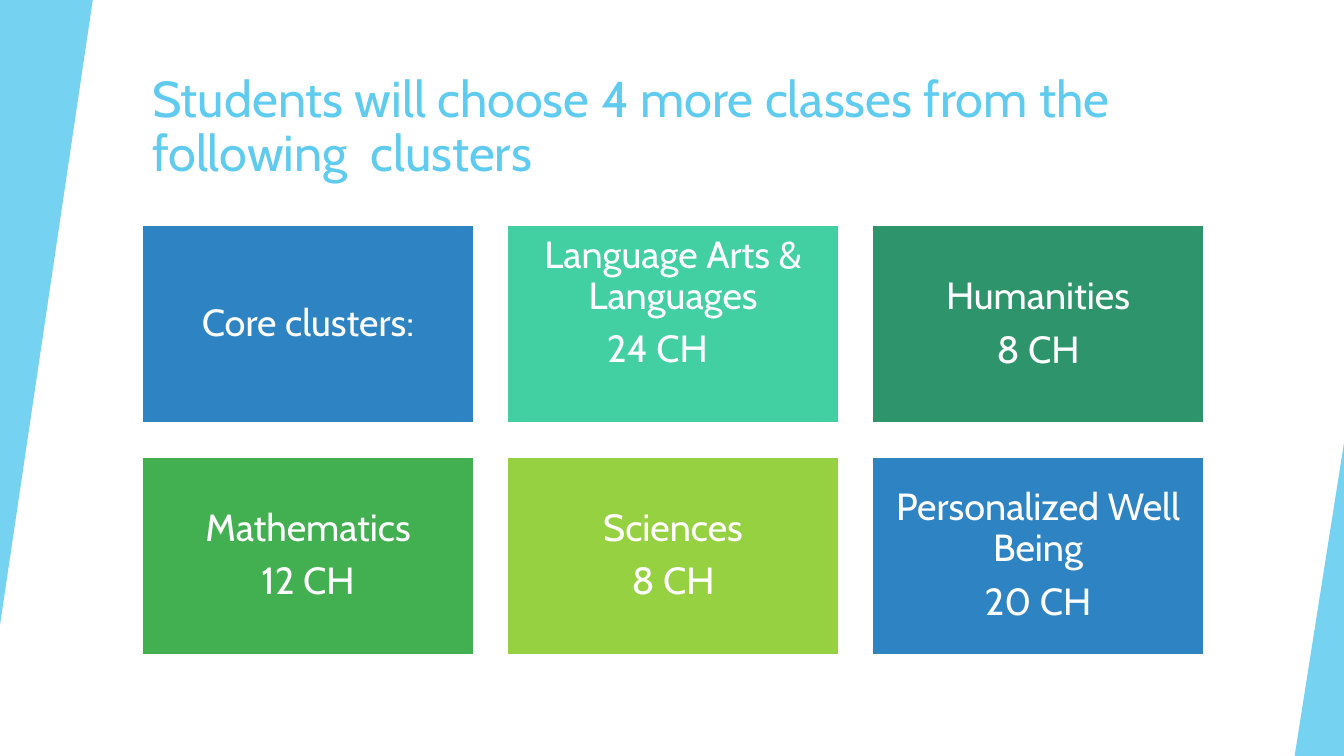
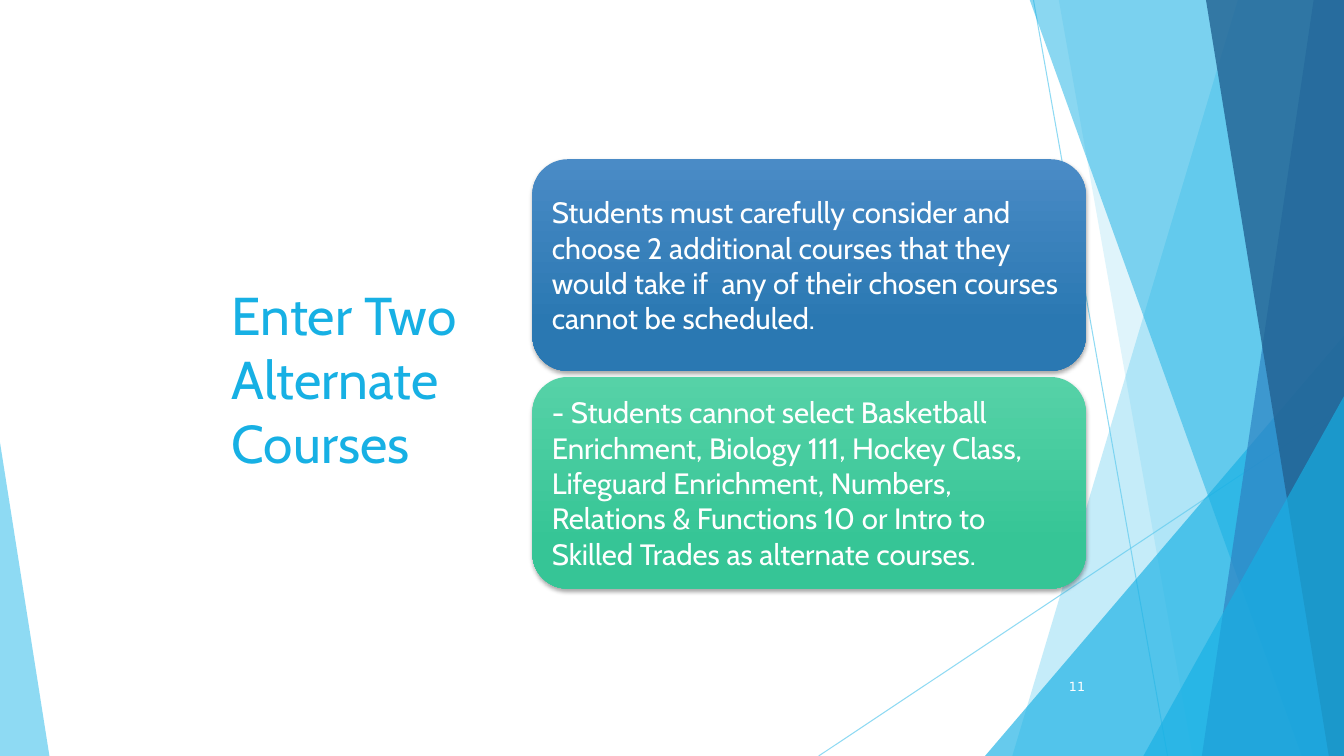
from pptx import Presentation
from pptx.dml.color import RGBColor
from pptx.enum.shapes import MSO_CONNECTOR, MSO_SHAPE as Preset
from pptx.enum.text import MSO_ANCHOR as Anchor, PP_ALIGN as Align
from pptx.oxml.ns import qn
from pptx.oxml.xmlchemy import OxmlElement
from pptx.util import Emu, Pt

PX = 9144  # one hundredth of an inch
WIDTH, HEIGHT = 1333, 750
FONT = "Cabin"
WHITE, SKY, AZURE, BLUE, NAVY = "FFFFFF", "5FCBEF", "17B0E4", "2E83C3", "226292"

# Tiles: fill, lines of text, space kept below, last line's right margin
TILES = [
    (BLUE, ["Core clusters:"], 11, 0),
    ("42D0A2", ["Language Arts & Languages", "24 CH"], 52, 31),
    ("2E946B", ["Humanities", "8 CH"], 11, 0),
    ("42B051", ["Mathematics", "12 CH"], 11, 0),
    ("96D141", ["Sciences", "8 CH"], 11, 0),
    (BLUE, ["Personalized Well Being", "20 CH"], 11, 0),
]
# Cards: top colour, bottom colour, text
CARDS = [
    ("4A8BC6", "2A78B2",
     "Students must carefully consider and choose 2 additional courses that "
     "they would take if  any of their chosen courses cannot be scheduled."),
    ("56D2A7", "36C596",
     "- Students cannot select Basketball Enrichment, Biology 111, Hockey "
     "Class, Lifeguard Enrichment, Numbers, Relations & Functions 10 or Intro "
     "to Skilled Trades as alternate courses."),
]


def px(*lengths):
    return [Emu(length * PX) for length in lengths]


def rgb(color):
    return RGBColor.from_string(color)


def set_alpha(shape, percent):
    for color in shape.element.iter(qn("a:srgbClr")):
        alpha = OxmlElement("a:alpha")
        alpha.set("val", str(percent * 1000))
        color.append(alpha)


def paint(shape, color, alpha=100):
    """Flat fill, no outline, no shadow."""
    shape.shadow.inherit = False
    shape.line.fill.background()
    shape.fill.solid()
    shape.fill.fore_color.rgb = rgb(color)
    if alpha < 100:
        set_alpha(shape, alpha)


def add_preset(page, preset, box, color, alpha=100):
    shape = page.shapes.add_shape(preset, *px(*box))
    paint(shape, color, alpha)
    return shape


def add_triangle(page, box, color, alpha, apex, rotation=0):
    shape = add_preset(page, Preset.ISOSCELES_TRIANGLE, box, color, alpha)
    shape.adjustments[0] = apex
    shape.rotation = rotation


def add_band(page, top_x, bottom_x, color, alpha):
    """Full-height band from a slanted left edge to the right side."""
    outline = page.shapes.build_freeform(top_x, -1, scale=PX)
    outline.add_line_segments([(WIDTH, -1), (WIDTH, HEIGHT), (bottom_x, HEIGHT)])
    paint(outline.convert_to_shape(), color, alpha)


def add_hairline(page, ends):
    line = page.shapes.add_connector(MSO_CONNECTOR.STRAIGHT, *px(*ends))
    line.line.color.rgb = rgb(SKY)
    line.line.width = Pt(0.75)
    set_alpha(line, 70)
    line.element.spPr.append(OxmlElement("a:effectLst"))


def draw_facets(page):
    add_hairline(page, (1025, 0, 1158, HEIGHT))
    add_hairline(page, (WIDTH, 403, 812, HEIGHT))
    add_band(page, 1228, 1004, SKY, 36)
    add_band(page, 1050, 1183, SKY, 20)
    add_triangle(page, (977, 333, 356, 417), AZURE, 66, apex=1)
    add_band(page, 1021, 1291, AZURE, 50)
    add_band(page, 1303, 1192, BLUE, 70)
    add_band(page, 1196, 1318, NAVY, 80)
    add_triangle(page, (1134, 393, 199, 357), AZURE, 66, apex=1)
    add_triangle(page, (0, 439, 49, 311), SKY, 70, apex=0)


def build_master(deck, page):
    """Draw the facets on an empty page, then move them behind the master."""
    title = page.shapes.title
    draw_facets(page)
    tree = deck.slide_master.shapes.element
    facets = [s for s in page.shapes if s.shape_id != title.shape_id]
    for number, shape in enumerate(facets):
        next(shape.element.iter(qn("p:cNvPr"))).set("id", str(100 + number))
        tree.insert(2 + number, shape.element)


def write(shape, lines, size, color=WHITE, align=Align.LEFT, spacing=1.0,
          after=0, inset=None, font=FONT):
    frame = shape.text_frame
    frame.word_wrap = True
    frame.vertical_anchor = Anchor.MIDDLE
    if inset is not None:
        frame.margin_left = frame.margin_right = Emu(inset * PX)
        frame.margin_top = frame.margin_bottom = Emu(inset * PX)
    frame.text = "\n".join(lines)
    for para in frame.paragraphs:
        para.alignment = align
        para.line_spacing = spacing
        para.space_after = Pt(after)
        para.font.name = font
        para.font.size = Pt(size)
        para.font.color.rgb = rgb(color)
    return frame


def set_title(page, box, text, size, color, spacing=1.0):
    title = page.shapes.title
    title.left, title.top, title.width, title.height = px(*box)
    write(title, [text], size, color, spacing=spacing)


def add_tile(page, box, color, lines, below, right):
    tile = add_preset(page, Preset.RECTANGLE, box, color)
    tile.line.color.rgb = rgb(WHITE)
    tile.line.width = Pt(1.5)
    frame = write(tile, lines, 27, align=Align.CENTER, spacing=0.9, after=9, inset=11)
    frame.margin_bottom = Emu(below * PX)
    if right:
        last = frame.paragraphs[-1]
        last._p.get_or_add_pPr().set("marR", str(right * PX))


def add_card(page, box, top_color, bottom_color, text):
    card = add_preset(page, Preset.ROUNDED_RECTANGLE, box, top_color)
    card.fill.gradient()
    card.fill.gradient_angle = 270
    stops = zip(card.fill.gradient_stops, (0, 0.78), (top_color, bottom_color))
    for stop, position, color in stops:
        stop.position = position
        stop.color.rgb = rgb(color)
    # Soft shadow straight below
    shadow = OxmlElement("a:outerShdw")
    for name, value in (("blurRad", Pt(3)), ("dist", Pt(2)), ("dir", 90 * 60000)):
        shadow.set(name, str(int(value)))
    shade = OxmlElement("a:srgbClr")
    shade.set("val", "000000")
    alpha = OxmlElement("a:alpha")
    alpha.set("val", "35000")
    shade.append(alpha)
    shadow.append(shade)
    card.element.spPr.find(qn("a:effectLst")).append(shadow)
    write(card, [text], 21, inset=9)


def build_clusters(page):
    cover = add_preset(page, Preset.RECTANGLE, (0, 0, WIDTH, HEIGHT), WHITE)
    page.shapes.element.insert(2, cover.element)  # behind the title
    set_title(page, (141, 67, 1115, 120),
              "Students will choose 4 more classes from the following  clusters",
              36, SKY, spacing=0.9)
    add_triangle(page, (0, 0, 92, 620), SKY, 85, apex=1, rotation=180)
    add_triangle(page, (1284, 439, 49, 311), SKY, 85, apex=1)
    wide, high, gap = 329, 197, 33
    for index, tile in enumerate(TILES):
        row, column = divmod(index, 3)
        box = (141 + column * (wide + gap), 223 + row * (high + gap), wide, high)
        add_tile(page, box, *tile)


def build_alternates(page):
    set_title(page, (220, 151, 291, 448), "Enter Two Alternate Courses", 38, AZURE)
    number = page.shapes.add_textbox(*px(1030, 661, 56, 40))
    write(number, ["11"], 9, align=Align.RIGHT, after=6, font="DejaVu Sans")
    high, gap = 210, 6
    for index, card in enumerate(CARDS):
        add_card(page, (528, 158 + index * (high + gap), 549, high), *card)


def main():
    deck = Presentation()
    deck.slide_width, deck.slide_height = px(WIDTH, HEIGHT)
    title_only = deck.slide_layouts[5]
    clusters, alternates = [deck.slides.add_slide(title_only) for _ in range(2)]
    build_master(deck, clusters)
    build_clusters(clusters)
    build_alternates(alternates)
    deck.save("out.pptx")


if __name__ == "__main__":
    main()
